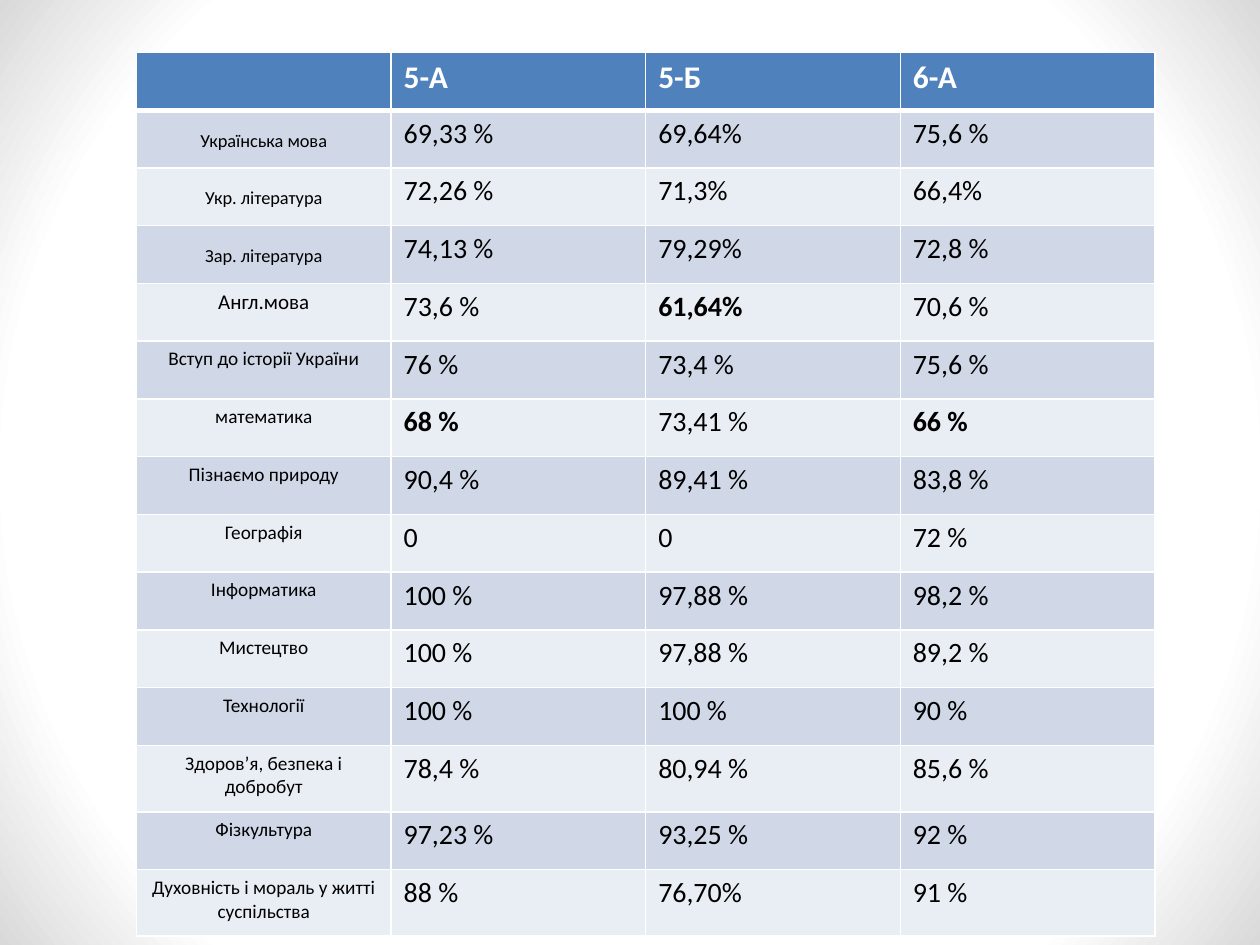
from lxml.etree import SubElement
from pptx import Presentation
from pptx.dml.color import RGBColor
from pptx.enum.shapes import MSO_SHAPE
from pptx.enum.text import MSO_ANCHOR, PP_ALIGN
from pptx.oxml.ns import qn
from pptx.util import Pt

WIDTH, HEIGHT = 720, 540
COLUMN_WIDTH, ROW_HEIGHT, TALL_ROW_HEIGHT = 145.5, 33, 38
HEADER_FILL, BAND_FILLS = "4F81BD", ("D0D8E8", "E9EDF4")
CLASSES = ("", "5-А", "5-Б", "6-А")
RESULTS = [
    ("Українська мова", "69,33 %", "69,64%", "75,6 %"),
    ("Укр. література", "72,26 %", "71,3%", "66,4%"),
    ("Зар. література", "74,13 %", "79,29%", "72,8 %"),
    ("Англ.мова", "73,6 %", "61,64%", "70,6 %"),
    ("Вступ до історії України", "76 %", "73,4 %", "75,6 %"),
    ("математика", "68 %", "73,41 %", "66 %"),
    ("Пізнаємо природу", "90,4 %", "89,41 %", "83,8 %"),
    ("Географія", "0", "0", "72 %"),
    ("Інформатика", "100 %", "97,88 %", "98,2 %"),
    ("Мистецтво", "100 %", "97,88 %", "89,2 %"),
    ("Технології", "100 %", "100 %", "90 %"),
    ("Здоров’я, безпека і добробут", "78,4 %", "80,94 %", "85,6 %"),
    ("Фізкультура", "97,23 %", "93,25 %", "92 %"),
    ("Духовність і мораль у житті суспільства", "88 %", "76,70%", "91 %"),
]
LANGUAGE_ROWS = (1, 2, 3)
TALL_ROWS = (12, 14)
LOWEST_SCORES = {(6, 1), (4, 2), (6, 3)}
SUBJECT_SIZES = {1: 10.5, 2: 10.5, 3: 10.5, 4: 12}


def color(value):
    return RGBColor.from_string(value)


def add_backdrop(page):
    """Fill the page with white that darkens radially towards the corners."""
    backdrop = page.shapes.add_shape(MSO_SHAPE.RECTANGLE, 0, 0, Pt(WIDTH), Pt(HEIGHT))
    backdrop.shadow.inherit = False
    backdrop.line.fill.background()
    backdrop.fill.gradient()
    stops = backdrop.fill.gradient_stops
    for stop, position, shade in zip(stops, (0.79, 1), ("FFFFFF", "D9D9D9")):
        stop.position = position
        stop.color.rgb = color(shade)
    gradient = backdrop.fill._xPr.find(qn("a:gradFill"))
    gradient.remove(gradient.find(qn("a:lin")))
    path = SubElement(gradient, qn("a:path"), path="circle")
    SubElement(path, qn("a:fillToRect"), l="50000", t="50000", r="50000", b="50000")


def set_borders(cell, bottom_width):
    properties = cell._tc.get_or_add_tcPr()
    widths = {"a:lnL": 1, "a:lnR": 1, "a:lnT": 1, "a:lnB": bottom_width}
    for index, (side, width) in enumerate(widths.items()):
        line = SubElement(properties, qn(side), w=str(Pt(width)))
        fill = SubElement(line, qn("a:solidFill"))
        SubElement(fill, qn("a:srgbClr"), val="FFFFFF")
        properties.insert(index, line)


def write_cell(cell, text, size, ink="000000", bold=False, align=PP_ALIGN.LEFT):
    para = cell.text_frame.paragraphs[0]
    para.alignment = align
    if text:
        span = para.add_run()
        span.text = text
        span.font.name = "Calibri"
        span.font.size = Pt(size)
        span.font.bold = bold
        span.font.color.rgb = color(ink)


def style_language_cell(cell):
    cell.vertical_anchor = MSO_ANCHOR.MIDDLE
    cell.margin_left = cell.margin_right = Pt(5)
    cell.margin_top = cell.margin_bottom = 0
    para = cell.text_frame.paragraphs[0]
    para.line_spacing = 1.15
    para.space_after = Pt(10)


def fill_cell(cell, text, row, column):
    cell.fill.solid()
    if row == 0:
        cell.fill.fore_color.rgb = color(HEADER_FILL)
        write_cell(cell, text, 18, "FFFFFF", True)
    else:
        cell.fill.fore_color.rgb = color(BAND_FILLS[(row - 1) % 2])
        if column == 0:
            write_cell(cell, text, SUBJECT_SIZES.get(row, 11), align=PP_ALIGN.CENTER)
            if row in LANGUAGE_ROWS:
                style_language_cell(cell)
        else:
            write_cell(cell, text, 16, bold=(row, column) in LOWEST_SCORES)
    set_borders(cell, 3 if row == 0 else 1)


def add_results_table(page):
    rows = [CLASSES] + RESULTS
    heights = [TALL_ROW_HEIGHT if row in TALL_ROWS else ROW_HEIGHT
               for row in range(len(rows))]
    table = page.shapes.add_table(
        len(rows), len(CLASSES), Pt(78), Pt(30),
        Pt(COLUMN_WIDTH * len(CLASSES)), Pt(sum(heights))).table
    for column in table.columns:
        column.width = Pt(COLUMN_WIDTH)
    for row, texts in enumerate(rows):
        table.rows[row].height = Pt(heights[row])
        for column, text in enumerate(texts):
            fill_cell(table.cell(row, column), text, row, column)


def main():
    deck = Presentation()
    deck.slide_width, deck.slide_height = Pt(WIDTH), Pt(HEIGHT)
    page = deck.slides.add_slide(deck.slide_layouts[6])
    add_backdrop(page)
    add_results_table(page)
    deck.save("out.pptx")


if __name__ == "__main__":
    main()
